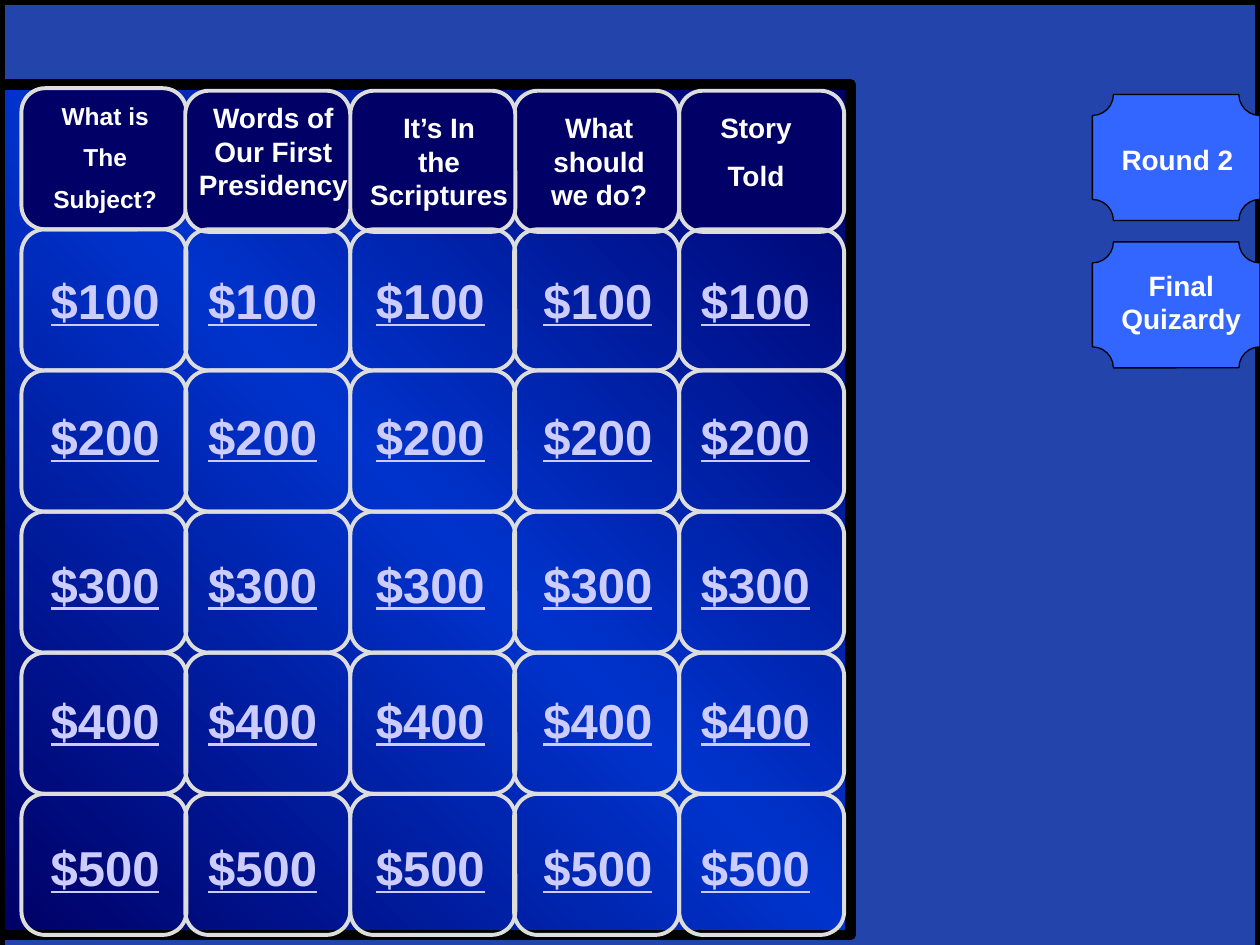
from copy import deepcopy
from dataclasses import dataclass

from lxml.etree import SubElement
from pptx import Presentation
from pptx.dml.color import RGBColor as Rgb
from pptx.enum.shapes import MSO_SHAPE as Kind
from pptx.enum.text import MSO_AUTO_SIZE as Fit, PP_ALIGN as Align
from pptx.oxml.ns import qn
from pptx.util import Emu, Pt

SCALE = 9144
HEX = {
    "black": "000000",
    "white": "FFFFFF",
    "blue": "3366FF",
    "navy": "000066",
    "royal": "0033CC",
    "edge": "DDDDDD",
    "lilac": "CCCCFF",
}


@dataclass(frozen=True)
class Box:
    x: int
    y: int
    w: int
    h: int

    def emu(self) -> list[Emu]:
        return [Emu(n * SCALE) for n in (self.x, self.y, self.w, self.h)]


@dataclass(frozen=True)
class Label:
    text: str
    box: Box
    size: int = 16
    gap: bool = True
    wrap: bool = True


PITCH, TALL = 261, 112
CELL_W, TOP = 131, 182
TEXT_X = (17, 142, 275, 408, 533)
TEXT_Y = (210, 318, 435, 543, 660)
HEADS = (
    Label("What is\nThe\nSubject?", Box(17, 75, 133, 104), size=14),
    Label("Words of Our First Presidency", Box(142, 75, 150, 91), gap=False),
    Label("It’s In\nthe\nScriptures", Box(283, 83, 131, 91), gap=False, wrap=False),
    Label("What should we do?", Box(417, 83, 117, 91)),
    Label("Story\nTold", Box(550, 83, 100, 77)),
)
LINKS = (
    Label("Round 2", Box(866, 108, 137, 37)),
    Label("Final Quizardy", Box(875, 208, 125, 64)),
)


def color(name: str) -> Rgb:
    return Rgb.from_string(HEX[name])


def draw(slide, kind: Kind, box: Box, fill: str | None = None,
         line: str = "black", width: float = 0.75):
    shape = slide.shapes.add_shape(kind, *box.emu())
    shape.shadow.inherit = False
    if fill:
        shape.fill.solid()
        shape.fill.fore_color.rgb = color(fill)
    else:
        shape.fill.background()
    shape.line.color.rgb = color(line)
    shape.line.width = Pt(width)
    if kind != Kind.RECTANGLE:
        shape.adjustments[0] = 0.167
    return shape


def fade(shape, alpha: int) -> None:
    tone = shape.element.spPr.find(qn("a:solidFill"))[0]
    SubElement(tone, qn("a:alpha"), val=str(alpha * 1000))


def blend(shape, names: tuple[str, ...]) -> None:
    fill = shape.fill
    fill.gradient()
    fill.gradient_angle = 45
    stops = shape.element.spPr.find(qn("a:gradFill")).find(qn("a:gsLst"))
    stops.append(deepcopy(stops[0]))
    for i, (stop, name) in enumerate(zip(fill.gradient_stops, names)):
        stop.position = i / (len(names) - 1)
        stop.color.rgb = color(name)


def write(slide, text: str, box: Box, *, size: int = 16, tone: str = "white",
          under: bool = False, gap: bool = True, wrap: bool = True) -> None:
    frame = slide.shapes.add_textbox(*box.emu()).text_frame
    frame.word_wrap = wrap
    frame.auto_size = Fit.SHAPE_TO_FIT_TEXT
    for i, line in enumerate(text.split("\n")):
        para = frame.add_paragraph() if i else frame.paragraphs[0]
        para.alignment = Align.CENTER
        if gap:
            space = SubElement(para._p.get_or_add_pPr(), qn("a:spcBef"))
            SubElement(space, qn("a:spcPct"), val="50000")
        run = para.add_run()
        run.text = line
        font = run.font
        font.name = "Arial"
        font.size = Pt(size)
        font.bold = True
        font.underline = under or None
        font.color.rgb = color(tone)


def put(slide, label: Label) -> None:
    write(slide, label.text, label.box, size=label.size,
          gap=label.gap, wrap=label.wrap)


def cell(slide, col: int, y: int, fill: str | None = None) -> None:
    box = Box(17 + PITCH * col // 2, y, CELL_W, TALL)
    draw(slide, Kind.ROUNDED_RECTANGLE, box, fill, "edge", 2.25)


def board(slide) -> None:
    draw(slide, Kind.RECTANGLE, Box(0, 0, 1000, 750), "black")
    fade(draw(slide, Kind.RECTANGLE, Box(0, 0, 1000, 758), "blue", width=6), 67)
    panel = draw(slide, Kind.RECTANGLE, Box(0, 67, 675, 675), "navy", width=6)
    blend(panel, ("navy", "royal", "navy"))


def grid(slide) -> None:
    for col in (0, 4, 3, 2, 1):
        cell(slide, col, 72 if col else 70, "navy")
    for head in HEADS:
        put(slide, head)
    for row, y in enumerate(TEXT_Y):
        for col, x in enumerate(TEXT_X):
            cell(slide, col, TOP + TALL * row)
            write(slide, f"${100 * (row + 1)}", Box(x, y, 133, 57),
                  size=28, tone="lilac", under=True)


def links(slide) -> None:
    for i, label in enumerate(LINKS):
        draw(slide, Kind.PLAQUE, Box(867, 75 + 117 * i, 133, 100), "blue")
        put(slide, label)


def main() -> None:
    deck = Presentation()
    deck.slide_width = Emu(1000 * SCALE)
    deck.slide_height = Emu(750 * SCALE)
    slide = deck.slides.add_slide(deck.slide_layouts[6])
    board(slide)
    grid(slide)
    links(slide)
    deck.save("out.pptx")


if __name__ == "__main__":
    main()
